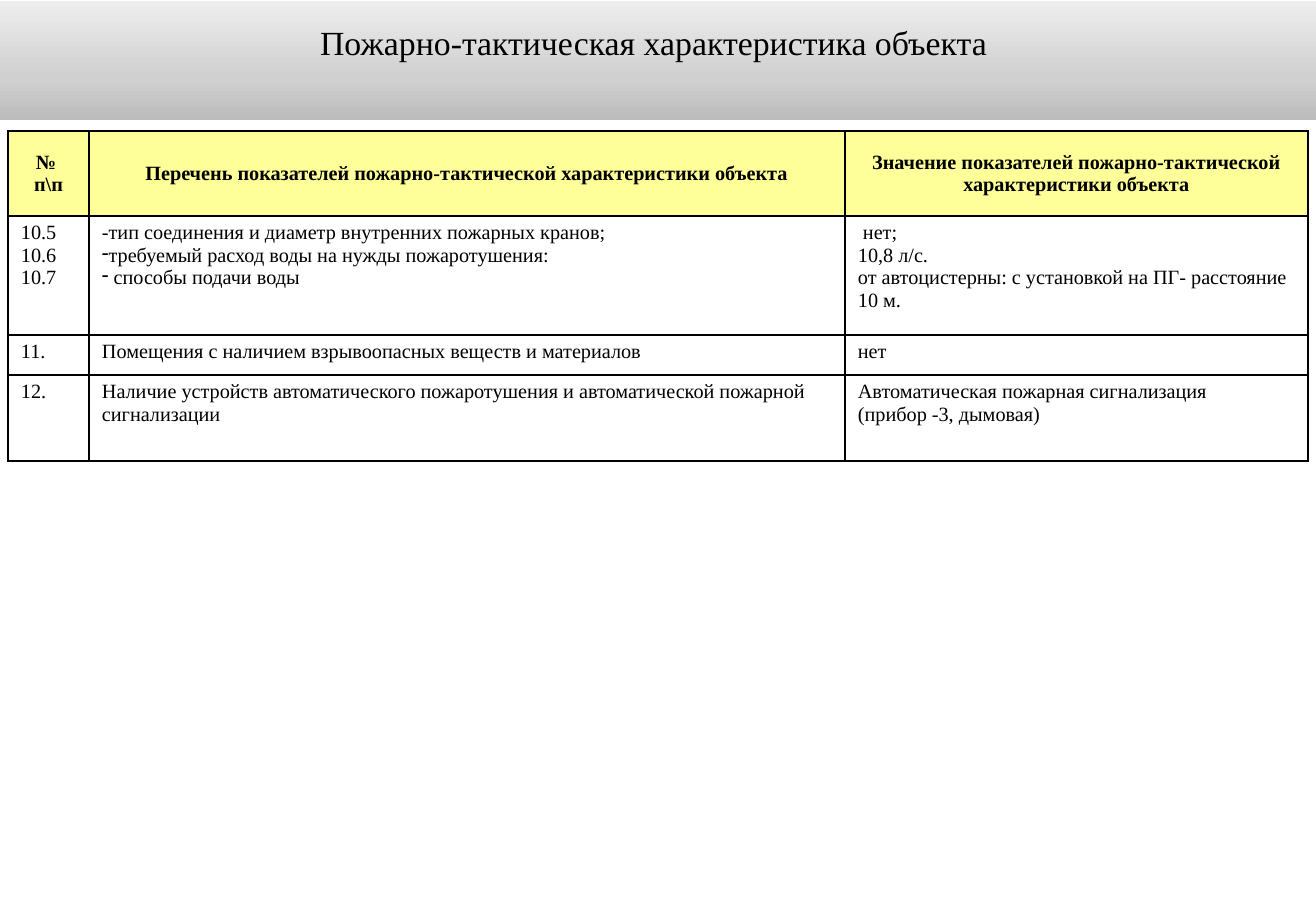
from lxml import etree
from pptx import Presentation
from pptx.dml.color import RGBColor
from pptx.enum.text import MSO_ANCHOR, MSO_AUTO_SIZE, PP_ALIGN
from pptx.oxml import parse_xml
from pptx.oxml.ns import nsdecls, qn
from pptx.util import Pt

CENTER, LEFT = PP_ALIGN.CENTER, PP_ALIGN.LEFT
TOP, MIDDLE = MSO_ANCHOR.TOP, MSO_ANCHOR.MIDDLE
NO_AUTOFIT = MSO_AUTO_SIZE.NONE

EMU_PER_PX = 914400 / 121.5
SLIDE_WIDTH, SLIDE_HEIGHT = 1316, 911
TITLE_ONLY_LAYOUT = 5
FONT = "Times New Roman"
BLACK, WHITE, YELLOW = "000000", "FFFFFF", "FFFF99"

TITLE = "Пожарно-тактическая характеристика объекта "
TITLE_GRADIENT = [(0, "BCBCBC"), (35, "D0D0D0"), (100, "EDEDED")]

COLUMN_WIDTHS = [81, 756, 463]
ROW_HEIGHTS = [85, 119, 40, 86]
# Each cell is a list of lines; a (bullet, text) pair is a bulleted line.
ROWS = [
    [
        ["№ ", "п\\п"],
        ["Перечень показателей пожарно-тактической характеристики объекта"],
        ["Значение показателей пожарно-тактической характеристики объекта"],
    ],
    [
        ["10.5", "10.6", "10.7"],
        [
            "-тип соединения и диаметр внутренних пожарных кранов;",
            ("-", "требуемый расход воды на нужды пожаротушения:"),
            ("-", " способы подачи воды"),
        ],
        [
            " нет;",
            "10,8 л/с.",
            "от автоцистерны: с установкой на ПГ- расстояние 10 м.",
        ],
    ],
    [
        ["11."],
        ["Помещения с наличием взрывоопасных веществ и материалов"],
        ["нет"],
    ],
    [
        ["12."],
        ["Наличие устройств автоматического пожаротушения и автоматической "
         "пожарной сигнализации"],
        ["Автоматическая пожарная сигнализация", "(прибор -3, дымовая)"],
    ],
]


def px(length):
    return round(length * EMU_PER_PX)


def color(hex_string):
    return RGBColor.from_string(hex_string)


def set_attributes(target, values):
    for name, value in values.items():
        setattr(target, name, value)


def add_bullet(paragraph, character):
    properties = paragraph._p.get_or_add_pPr()
    properties.set("marL", "0")
    properties.set("indent", "0")
    etree.SubElement(properties, qn("a:buChar")).set("char", character)


def write_lines(text_frame, lines, size, bold=False, alignment=LEFT):
    for index, line in enumerate(lines):
        paragraph = text_frame.add_paragraph() if index else text_frame.paragraphs[0]
        bullet, text = line if isinstance(line, tuple) else ("", line)
        if bullet:
            add_bullet(paragraph, bullet)
        paragraph.alignment = alignment
        run = paragraph.add_run()
        run.text = text
        set_attributes(run.font, {"name": FONT, "size": Pt(size), "bold": bold})
        run.font.color.rgb = color(BLACK)


def fill_gradient(shape, stops):
    """Fill the shape with color stops running from bottom to top."""
    stop_xml = "".join(
        f'<a:gs pos="{percent * 1000}"><a:srgbClr val="{hex_string}"/></a:gs>'
        for percent, hex_string in stops
    )
    shape._element.spPr.append(parse_xml(
        f'<a:gradFill {nsdecls("a")} rotWithShape="1"><a:gsLst>{stop_xml}</a:gsLst>'
        '<a:lin ang="16200000" scaled="0"/></a:gradFill>'
    ))


def add_title_band(slide):
    title = slide.shapes.title
    set_attributes(title, {
        "left": 0, "top": px(1), "width": px(SLIDE_WIDTH), "height": px(119),
    })
    fill_gradient(title, TITLE_GRADIENT)
    set_attributes(title.text_frame, {
        "word_wrap": True, "auto_size": NO_AUTOFIT, "vertical_anchor": TOP,
        "margin_left": px(11), "margin_right": px(11),
        "margin_top": px(21), "margin_bottom": px(6),
    })
    write_lines(title.text_frame, [TITLE], 20, alignment=CENTER)


def add_borders(cell):
    properties = cell._tc.get_or_add_tcPr()
    for side in ("lnL", "lnR", "lnT", "lnB"):
        properties.append(parse_xml(
            f'<a:{side} {nsdecls("a")} w="{Pt(1)}"><a:solidFill>'
            f'<a:srgbClr val="{BLACK}"/></a:solidFill></a:{side}>'
        ))


def format_cell(cell, lines, is_header):
    add_borders(cell)
    cell.fill.solid()
    cell.fill.fore_color.rgb = color(YELLOW if is_header else WHITE)
    set_attributes(cell, {
        "vertical_anchor": MIDDLE if is_header else TOP,
        "margin_left": px(13), "margin_right": px(13),
        "margin_top": px(6), "margin_bottom": px(6),
    })
    write_lines(cell.text_frame, lines, 12, is_header, CENTER if is_header else LEFT)


def add_characteristics_table(slide):
    table = slide.shapes.add_table(
        len(ROWS), len(COLUMN_WIDTHS), px(8), px(131),
        px(sum(COLUMN_WIDTHS)), px(sum(ROW_HEIGHTS)),
    ).table
    set_attributes(table, {"first_row": False, "horz_banding": False})
    for column, width in zip(table.columns, COLUMN_WIDTHS):
        column.width = px(width)
    for row_index, (row, height) in enumerate(zip(table.rows, ROW_HEIGHTS)):
        row.height = px(height)
        for cell, lines in zip(row.cells, ROWS[row_index]):
            format_cell(cell, lines, is_header=row_index == 0)


def main():
    presentation = Presentation()
    set_attributes(presentation, {
        "slide_width": px(SLIDE_WIDTH), "slide_height": px(SLIDE_HEIGHT),
    })
    slide = presentation.slides.add_slide(presentation.slide_layouts[TITLE_ONLY_LAYOUT])
    add_title_band(slide)
    add_characteristics_table(slide)
    presentation.save("out.pptx")


if __name__ == "__main__":
    main()
